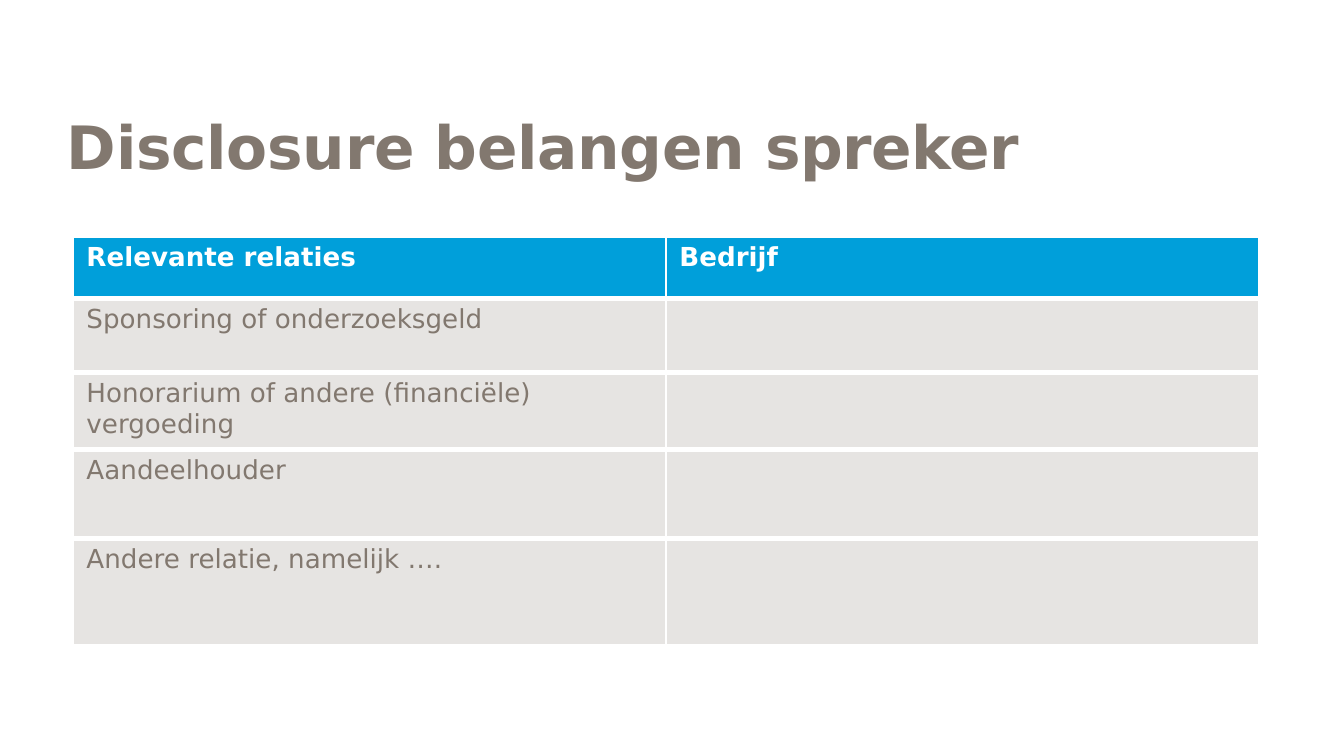
"""Builds the speaker disclosure slide: a title above a table of relations."""
from lxml import etree
from pptx import Presentation
from pptx import util as u
from pptx.dml.color import RGBColor
from pptx.enum import text
from pptx.oxml.ns import qn

TITLE = "Disclosure belangen spreker"
ROWS = [
    ("Relevante relaties", "Bedrijf"),
    ("Sponsoring of onderzoeksgeld", ""),
    ("Honorarium of andere (financiële) vergoeding", ""),
    ("Aandeelhouder", ""),
    ("Andere relatie, namelijk ….", ""),
]
ROW_HEIGHTS = [62, 74, 77, 89, 106]
COLUMN_WIDTH = 593
SLIDE_SIZE = (1344, 756)
TITLE_BOX = (67, 63, 1210, 126)
TABLE_CORNER = (73, 237)

WHITE = RGBColor(0xFF, 0xFF, 0xFF)
TAUPE = RGBColor(0x82, 0x78, 0x6F)
BLUE = RGBColor(0x00, 0x9F, 0xDA)
PALE = RGBColor(0xE6, 0xE4, 0xE2)

FONT = {"name": "DejaVu Sans"}
TITLE_FONT = {**FONT, "size": u.Pt(32), "bold": True}
HEAD_FONT = {**FONT, "size": u.Pt(14), "bold": True}
BODY_FONT = {**HEAD_FONT, "bold": False}
TITLE_FRAME = {"margin_left": 0, "margin_top": 0, "margin_right": 0, "word_wrap": True,
               "vertical_anchor": text.MSO_ANCHOR.BOTTOM}
CELL_MARGINS = {"margin_left": u.Inches(0.1), "margin_right": u.Inches(0.1),
                "margin_top": u.Inches(0.04), "margin_bottom": u.Inches(0.04)}


def px(length):
    return u.Emu(round(length * 914400 / 134.4))


def set_all(target, values):
    for name, value in values.items():
        setattr(target, name, value)


def write(para, words, font, color):
    span = para.add_run()
    span.text = words
    set_all(span.font, font)
    span.font.color.rgb = color
    return span


def add_borders(cell, widths):
    properties = cell._tc.get_or_add_tcPr()
    for index, (side, points) in enumerate(widths.items()):
        line = etree.Element(qn(f"a:ln{side}"), w=str(u.Pt(points)))
        fill = etree.SubElement(line, qn("a:solidFill"))
        etree.SubElement(fill, qn("a:srgbClr"), val=str(WHITE))
        properties.insert(index, line)


def add_title(page):
    title = page.shapes.title
    set_all(title, dict(zip(("left", "top", "width", "height"), map(px, TITLE_BOX))))
    frame = title.text_frame
    set_all(frame, {**TITLE_FRAME, "margin_bottom": px(8)})
    para = frame.paragraphs[0]
    set_all(para, {"alignment": text.PP_ALIGN.LEFT, "line_spacing": 0.8})
    span = write(para, TITLE, TITLE_FONT, TAUPE)
    span.font._element.set("spc", "-20")


def add_relations(page):
    columns = len(ROWS[0])
    size = (columns * COLUMN_WIDTH, sum(ROW_HEIGHTS))
    table = page.shapes.add_table(len(ROWS), columns, *map(px, TABLE_CORNER + size)).table
    for column in table.columns:
        column.width = px(COLUMN_WIDTH)
    last = len(ROWS) - 1
    for r, (words, height) in enumerate(zip(ROWS, ROW_HEIGHTS)):
        table.rows[r].height = px(height)
        fill, font, color = (PALE, BODY_FONT, TAUPE) if r else (BLUE, HEAD_FONT, WHITE)
        widths = {"L": 1, "R": 1, "T": 3 if r else 1, "B": 3 if r < last else 1}
        for cell, content in zip(table.rows[r].cells, words):
            set_all(cell, CELL_MARGINS)
            cell.fill.solid()
            cell.fill.fore_color.rgb = fill
            add_borders(cell, widths)
            if content:
                write(cell.text_frame.paragraphs[0], content, font, color)


def main():
    deck = Presentation()
    deck.slide_width, deck.slide_height = map(px, SLIDE_SIZE)
    page = deck.slides.add_slide(deck.slide_layouts.get_by_name("Title Only"))
    add_title(page)
    add_relations(page)
    deck.save("out.pptx")


if __name__ == "__main__":
    main()
